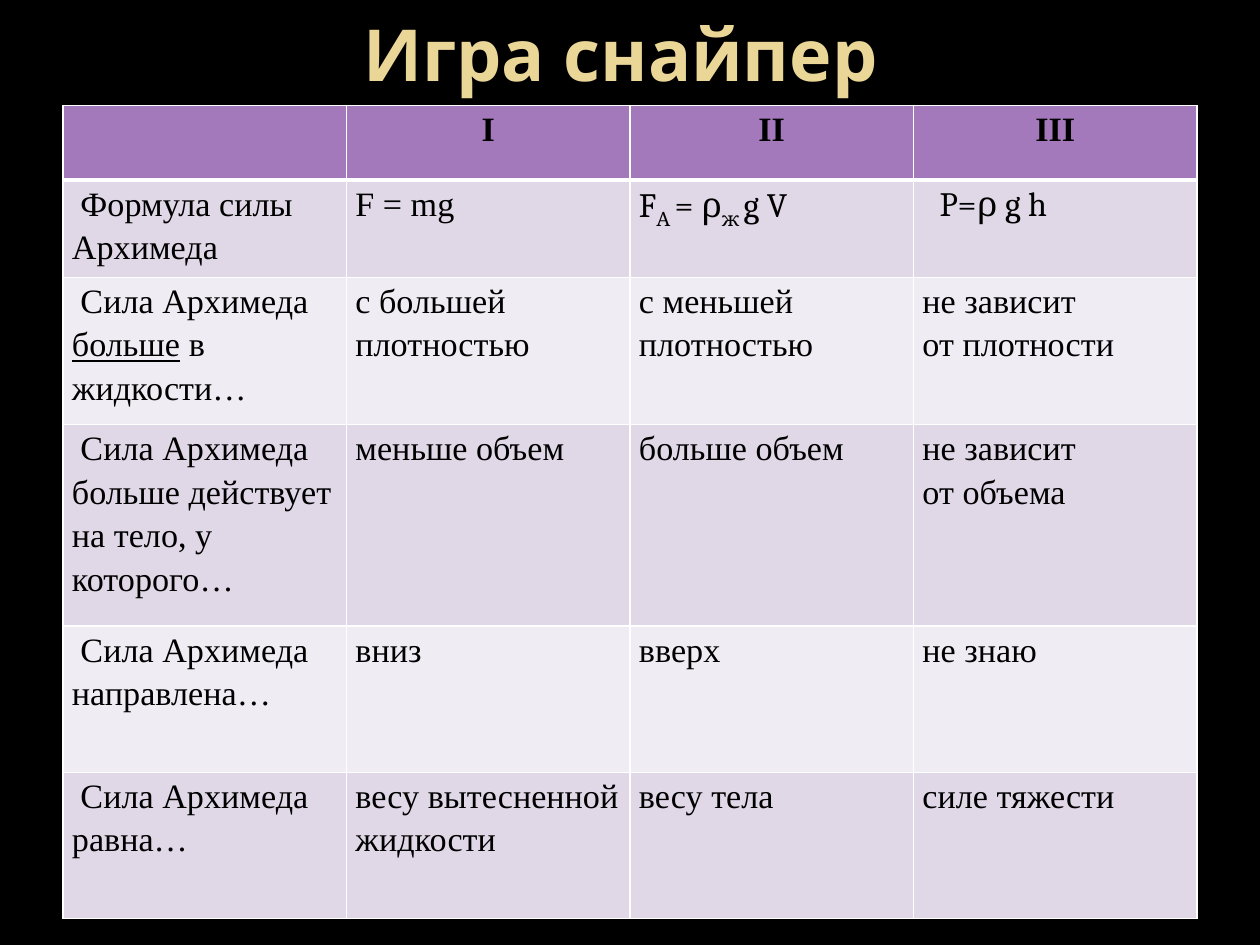
from lxml import etree
from pptx import Presentation
from pptx import util as u
from pptx.dml.color import RGBColor
from pptx.enum import text
from pptx.oxml import ns

BLACK, WHITE, GOLD = "000000", "FFFFFF", "EAD696"
HEADER, DARK_BAND, LIGHT_BAND = "A379BB", "E0D7E7", "F0ECF3"
SERIF, FORMULA, HEADING = "Times New Roman", "Cambria", "Open Sans"

# A cell is a plain string or a list of (text, style) pieces.
MATH = {"name": FORMULA}
SUBSCRIPT = {"name": FORMULA, "baseline": "-25000"}
ROWS = [
    ["", "I", "II", "III"],
    [" Формула силы Архимеда ", "F = mg",
     [("F", MATH), ("А ", SUBSCRIPT), ("= ρ", MATH), ("ж ", SUBSCRIPT), ("g V", MATH)],
     [("  ", {}), ("P=ρ g h", MATH)]],
    [[(" Сила Архимеда\n", {}), ("больше", {"underline": True}), (" в жидкости…", {})],
     "с большей плотностью", "с меньшей \nплотностью", "не зависит \nот плотности"],
    [" Сила Архимеда больше действует на тело, у которого…",
     "меньше объем", "больше объем", "не зависит \nот объема"],
    [" Сила Архимеда направлена…", "вниз", "вверх", "не знаю"],
    [" Сила Архимеда равна…", "весу вытесненной жидкости", "весу тела ", "силе тяжести"],
]
ROW_HEIGHTS = [1.5, 1.96, 2.97, 4.06, 2.95, 2.95]


def color(value):
    return RGBColor.from_string(value)


class SlideBuilder:
    """Holds the text style and the slide being filled."""

    size = 19.5
    line_spacing = 1.15
    inset = 0.18

    def __init__(self, slide):
        self.slide = slide

    def background(self, fill):
        self.slide.background.fill.solid()
        self.slide.background.fill.fore_color.rgb = color(fill)

    def format_run(self, run, name=SERIF, size=None, fill=BLACK, bold=False,
                   underline=False, baseline=None):
        font = run.font
        font.name, font.size = name, u.Pt(size or self.size)
        font.bold, font.underline = bold, underline
        font.color.rgb = color(fill)
        if baseline:
            font._element.set("baseline", baseline)

    def title(self, wording, left, top, width, height):
        shape = self.slide.shapes.add_textbox(*map(u.Cm, (left, top, width, height)))
        frame = shape.text_frame
        frame.word_wrap = True
        frame.vertical_anchor = text.MSO_ANCHOR.MIDDLE
        frame.text = wording
        paragraph = frame.paragraphs[0]
        paragraph.alignment = text.PP_ALIGN.CENTER
        self.format_run(paragraph.runs[0], HEADING, 41, GOLD, bold=True)

    def border(self, cell, side, points):
        line = etree.SubElement(cell._tc.get_or_add_tcPr(), ns.qn(f"a:ln{side}"),
                                w=str(u.Pt(points)))
        fill = etree.SubElement(line, ns.qn("a:solidFill"))
        etree.SubElement(fill, ns.qn("a:srgbClr"), val=WHITE)

    def cell(self, cell, content, fill, is_header, below_header):
        # Borders go in before the fill, as the schema orders them
        for side in "LRTB":
            thick = (is_header and side == "B") or (below_header and side == "T")
            self.border(cell, side, 3 if thick else 1)
        cell.fill.solid()
        cell.fill.fore_color.rgb = color(fill)
        cell.margin_left = cell.margin_right = u.Cm(self.inset)
        cell.margin_top = cell.margin_bottom = 0
        if not content:
            return
        pieces = [(content, {})] if isinstance(content, str) else content
        paragraph = cell.text_frame.paragraphs[0]
        paragraph.line_spacing = self.line_spacing
        if is_header:
            paragraph.alignment = text.PP_ALIGN.CENTER
        paragraph.text = pieces[0][0]
        for run in paragraph.runs:
            self.format_run(run, bold=is_header, **pieces[0][1])
        for wording, style in pieces[1:]:
            run = paragraph.add_run()
            run.text = wording
            self.format_run(run, **style)

    def table(self, rows, heights, left, top, width):
        columns = len(rows[0])
        table = self.slide.shapes.add_table(
            len(rows), columns, u.Cm(left), u.Cm(top),
            u.Cm(width), u.Cm(sum(heights))).table
        for column in table.columns:
            column.width = u.Cm(width / columns)
        for i, (contents, height) in enumerate(zip(rows, heights)):
            table.rows[i].height = u.Cm(height)
            fill = HEADER if i == 0 else DARK_BAND if i % 2 else LIGHT_BAND
            for j, content in enumerate(contents):
                self.cell(table.cell(i, j), content, fill, i == 0, i == 1)


def main():
    presentation = Presentation()
    presentation.slide_width, presentation.slide_height = u.Cm(25.4), u.Cm(19.05)
    builder = SlideBuilder(presentation.slides.add_slide(presentation.slide_layouts[6]))

    # Background and title
    builder.background(BLACK)
    builder.title("Игра снайпер ", 1.27, 0, 22.86, 2.13)

    # Quiz table
    builder.table(ROWS, ROW_HEIGHTS, 1.27, 2.13, 22.86)

    presentation.save("out.pptx")


if __name__ == "__main__":
    main()
